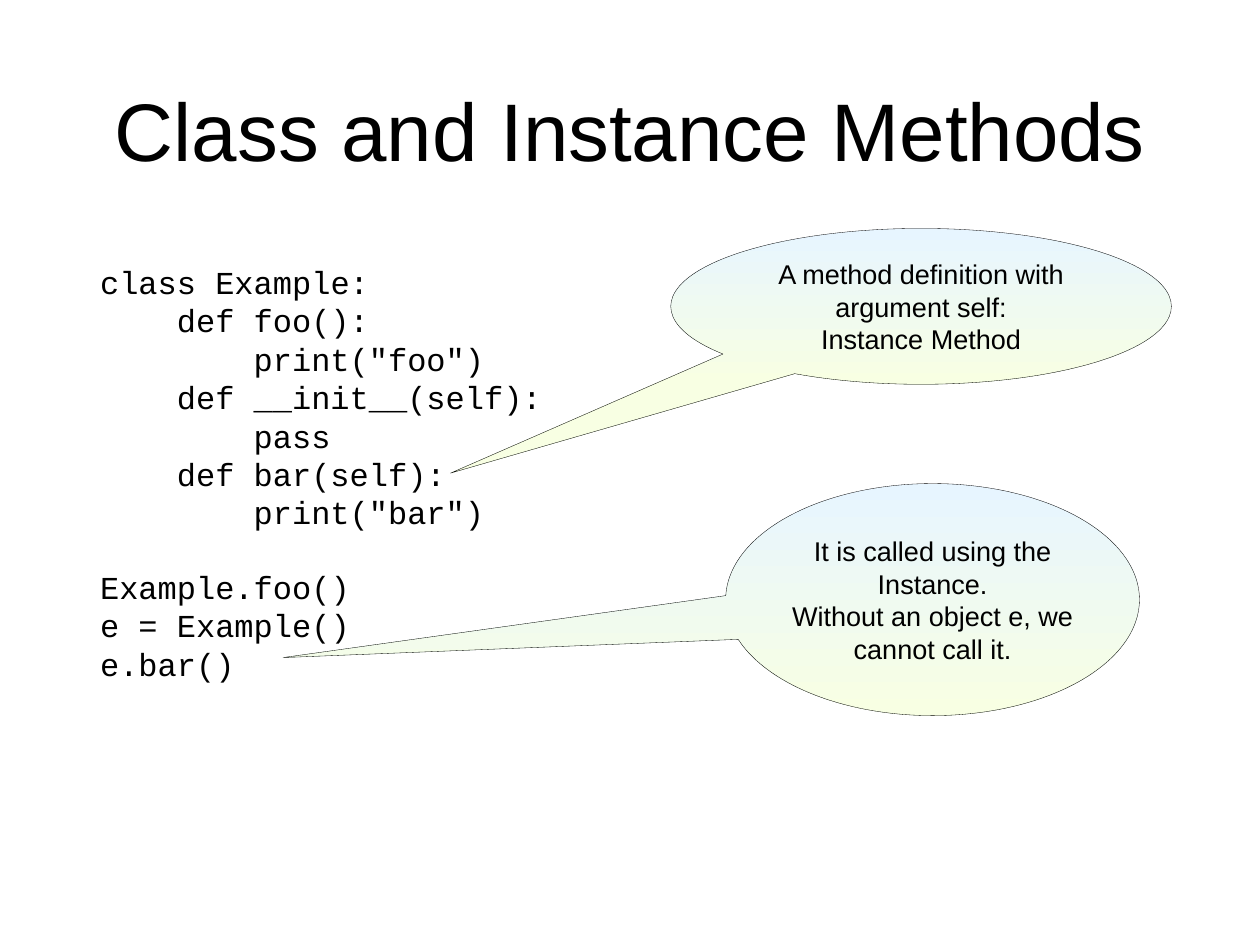
from pptx import Presentation
from pptx.dml.color import RGBColor
from pptx.enum.shapes import MSO_SHAPE
from pptx.enum.text import MSO_ANCHOR, MSO_AUTO_SIZE, PP_ALIGN
from pptx.util import Inches, Pt

BLACK = RGBColor(0x00, 0x00, 0x00)
SKY = RGBColor(0xE7, 0xF5, 0xFF)
CREAM = RGBColor(0xF8, 0xFF, 0xE3)

CALLOUT = MSO_SHAPE.OVAL_CALLOUT
MIDDLE = MSO_ANCHOR.MIDDLE
NO_AUTOFIT = MSO_AUTO_SIZE.NONE
LEFT = PP_ALIGN.LEFT
CENTER = PP_ALIGN.CENTER

TITLE_ONLY = 5
INSET = 0.06
CODE_SIZE = 26
INDENT = Pt(4 * 0.6 * CODE_SIZE)
CODE_LINE = Pt(1.133 * CODE_SIZE)

CODE = [
    (0, "class Example:"),
    (1, "def foo():"),
    (2, 'print("foo")'),
    (1, "def __init__(self):"),
    (2, "pass"),
    (1, "def bar(self):"),
    (2, 'print("bar")'),
    (0, "Example.foo()"),
    (0, "e = Example()"),
    (0, "e.bar()"),
]
FIRST_CALL = "Example.foo()"

CALLOUTS = [
    ((7.57, 2.58, 5.65, 1.76), (-0.94, 1.07),
     ["A method definition with argument self:", "Instance Method"]),
    ((8.19, 5.46, 4.67, 2.62), (-1.57, 0.25),
     ["It is called using the Instance.",
      "Without an object e, we cannot call it."]),
]


def write_lines(tf, lines, font, size, align):
    tf.word_wrap = True
    tf.auto_size = NO_AUTOFIT
    tf.vertical_anchor = MIDDLE
    tf.margin_left = tf.margin_right = Inches(INSET)
    tf.margin_top = tf.margin_bottom = Inches(INSET)
    for i, line in enumerate(lines):
        p = tf.add_paragraph() if i else tf.paragraphs[0]
        p.text = line
        p.alignment = align
        p.font.name = font
        p.font.size = Pt(size)
        p.font.color.rgb = BLACK


def add_title(slide, box, text):
    sp = slide.shapes.title
    sp.left, sp.top, sp.width, sp.height = map(Inches, box)
    write_lines(sp.text_frame, [text], "Arial", 66.4, CENTER)


def add_code(slide, box, code):
    tf = slide.shapes.add_textbox(*map(Inches, box)).text_frame
    write_lines(tf, [line for _, line in code], "Courier New", CODE_SIZE, LEFT)
    for p, (level, line) in zip(tf.paragraphs, code):
        pPr = p._p.get_or_add_pPr()
        pPr.set("marL", str(level * INDENT))
        pPr.set("indent", "0")
        if line == FIRST_CALL:
            p.space_before = CODE_LINE


def add_callout(slide, box, tip, lines):
    sp = slide.shapes.add_shape(CALLOUT, *map(Inches, box))
    sp.shadow.inherit = False
    sp.adjustments[0], sp.adjustments[1] = tip
    sp.fill.gradient()
    sp.fill.gradient_angle = 270
    for stop, position, color in zip(sp.fill.gradient_stops, (0, 1), (SKY, CREAM)):
        stop.position = position
        stop.color.rgb = color
    sp.line.color.rgb = BLACK
    sp.line.width = Pt(0.25)
    write_lines(sp.text_frame, lines, "Arial", 22, CENTER)


def main():
    prs = Presentation()
    prs.slide_width = Inches(14.22)
    prs.slide_height = Inches(10.67)
    slide = prs.slides.add_slide(prs.slide_layouts[TITLE_ONLY])
    add_title(slide, (1.04, 0.28, 12.14, 2.36), "Class and Instance Methods")
    add_code(slide, (1.07, 2.99, 5.2, 4.69), CODE)
    for box, tip, lines in CALLOUTS:
        add_callout(slide, box, tip, lines)
    prs.save("out.pptx")


if __name__ == "__main__":
    main()
